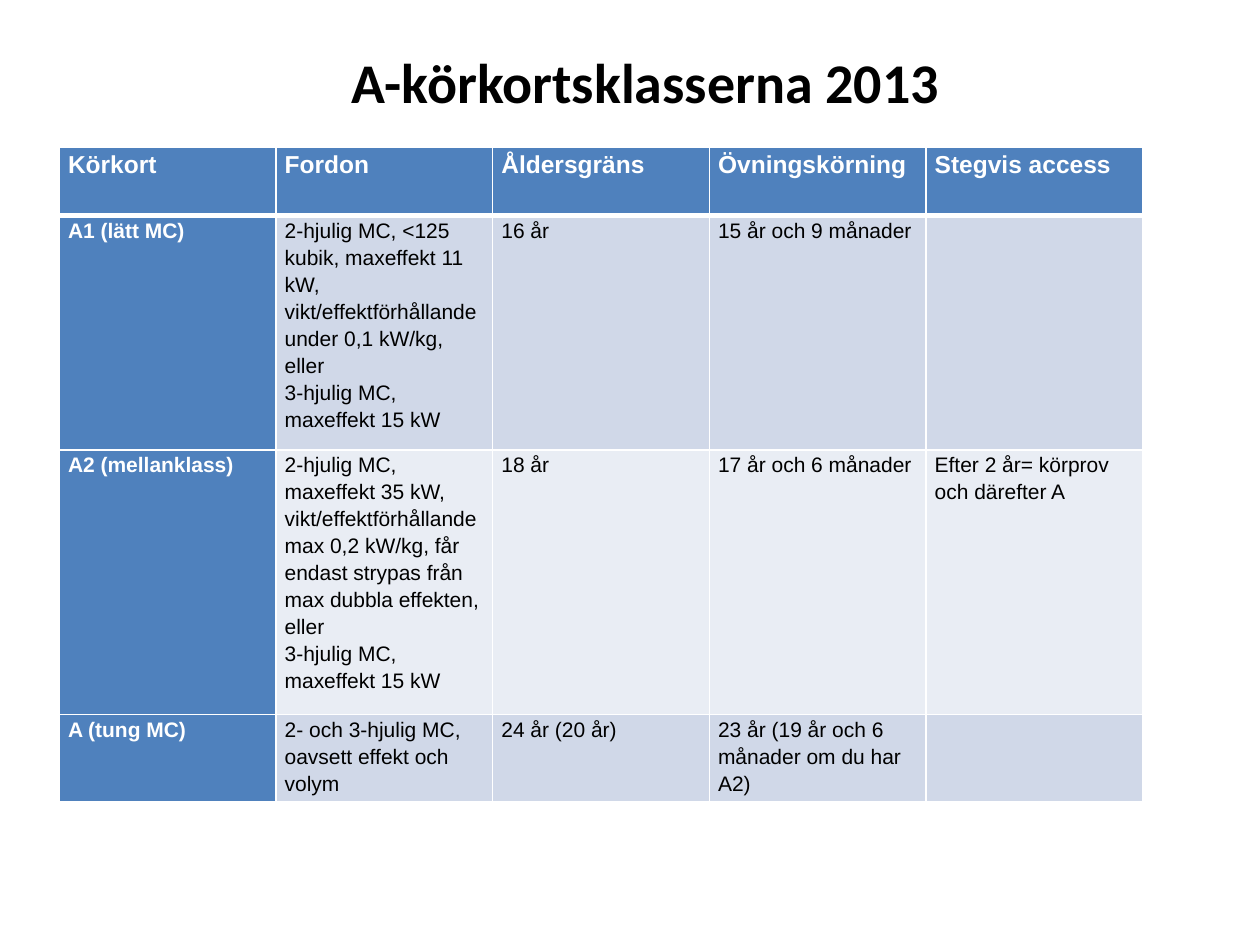
from lxml import etree
from pptx import Presentation
from pptx.dml.color import RGBColor
from pptx.enum.text import MSO_ANCHOR, PP_ALIGN
from pptx.oxml.ns import qn
from pptx.util import Inches, Pt

CENTER, MIDDLE, TOP = PP_ALIGN.CENTER, MSO_ANCHOR.MIDDLE, MSO_ANCHOR.TOP
TITLE_ONLY = 5

BLACK = RGBColor(0x00, 0x00, 0x00)
WHITE = RGBColor(0xFF, 0xFF, 0xFF)
BLUE = RGBColor(0x4F, 0x81, 0xBD)
BANDS = RGBColor(0xD0, 0xD8, 0xE8), RGBColor(0xE9, 0xED, 0xF4)

TITLE = "A-körkortsklasserna 2013"
ROWS = [
    ("Körkort", "Fordon", "Åldersgräns", "Övningskörning", "Stegvis access"),
    ("A1 (lätt MC)",
     "2-hjulig MC, <125 kubik, maxeffekt 11 kW, vikt/effektförhållande "
     "under 0,1 kW/kg, eller\n3-hjulig MC, maxeffekt 15 kW",
     "16 år", "15 år och 9 månader", ""),
    ("A2 (mellanklass)",
     "2-hjulig MC, maxeffekt 35 kW, vikt/effektförhållande max 0,2 kW/kg, "
     "får endast strypas från max dubbla effekten, eller\n"
     "3-hjulig MC, maxeffekt 15 kW",
     "18 år", "17 år och 6 månader", "Efter 2 år= körprov och därefter A"),
    ("A (tung MC)", "2- och 3-hjulig MC, oavsett effekt och volym",
     "24 år (20 år)", "23 år (19 år och 6 månader om du har A2)", ""),
]
ROW_HEIGHTS = [0.54, 1.86, 2.1, 0.69]
COLUMN_WIDTH = 1.72
TABLE_LEFT, TABLE_TOP = 0.47, 1.17

CELL_FORMAT = {
    "margin_left": Inches(0.07), "margin_right": Inches(0.07),
    "margin_top": 0, "margin_bottom": 0, "vertical_anchor": TOP,
}


def set_format(target, values):
    for name, value in values.items():
        setattr(target, name, value)


def set_font(font, color, **values):
    set_format(font, values)
    font.color.rgb = color


def set_borders(cell, widths):
    """Draw white borders; widths maps a:lnL, a:lnR, a:lnT, a:lnB to points."""
    properties = cell._tc.get_or_add_tcPr()
    for tag, width in widths.items():
        line = etree.SubElement(properties, qn(tag), w=str(Pt(width)))
        fill = etree.SubElement(line, qn("a:solidFill"))
        etree.SubElement(fill, qn("a:srgbClr"), val=str(WHITE))


def add_title(page):
    title = page.shapes.title
    set_format(title, {"left": Inches(0.75), "top": Inches(0.3),
                       "width": Inches(8.75), "height": Inches(0.69)})
    title.text_frame.vertical_anchor = MIDDLE
    para = title.text_frame.paragraphs[0]
    para.text, para.alignment = TITLE, CENTER
    set_font(para.runs[0].font, BLACK, name="Calibri", size=Pt(32), bold=True)


def fill_cell(cell, text, row, column):
    header = row == 0
    heading = header or column == 0
    set_borders(cell, {"a:lnL": 1, "a:lnR": 1,
                       "a:lnT": 3 if row == 1 else 1,
                       "a:lnB": 3 if header else 1})
    cell.fill.solid()
    cell.fill.fore_color.rgb = BLUE if heading else BANDS[(row - 1) % 2]
    set_format(cell, CELL_FORMAT)
    para = cell.text_frame.paragraphs[0]
    para.text, para.line_spacing = text, 1.15
    for span in para.runs:
        set_font(span.font, WHITE if heading else BLACK, name="Arial",
                 size=Pt(14 if header else 12), bold=heading)


def add_licence_table(page):
    columns = len(ROWS[0])
    table = page.shapes.add_table(
        len(ROWS), columns, Inches(TABLE_LEFT), Inches(TABLE_TOP),
        Inches(COLUMN_WIDTH * columns), Inches(sum(ROW_HEIGHTS))).table
    for table_row, height in zip(table.rows, ROW_HEIGHTS):
        table_row.height = Inches(height)
    for table_column in table.columns:
        table_column.width = Inches(COLUMN_WIDTH)
    for row, texts in enumerate(ROWS):
        for column, text in enumerate(texts):
            fill_cell(table.cell(row, column), text, row, column)


def main():
    deck = Presentation()
    deck.slide_width, deck.slide_height = Inches(10), Inches(7.5)
    page = deck.slides.add_slide(deck.slide_layouts[TITLE_ONLY])
    add_title(page)
    add_licence_table(page)
    deck.save("out.pptx")


if __name__ == "__main__":
    main()
